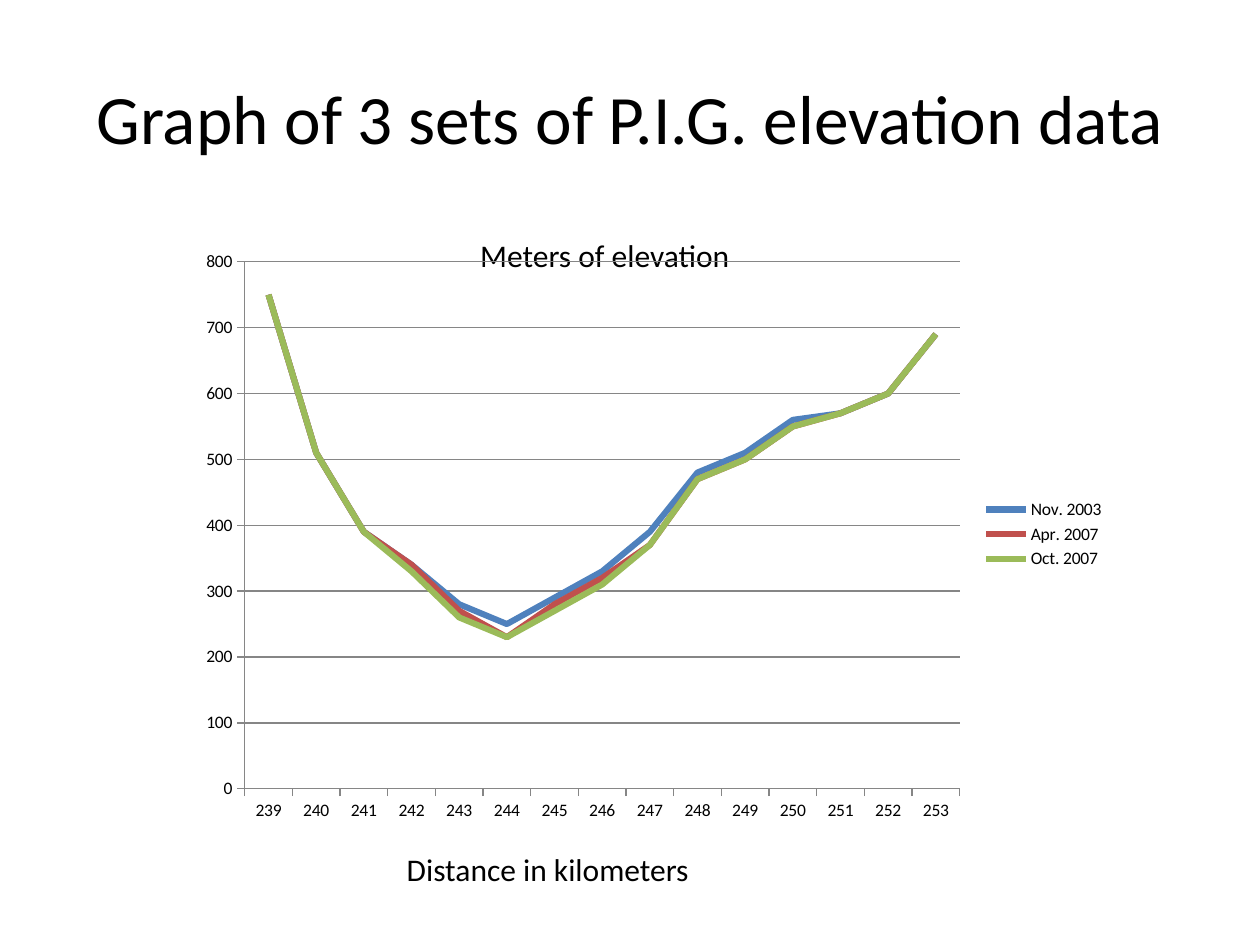
from lxml import etree
from pptx import Presentation
from pptx import util as u
from pptx.chart.data import CategoryChartData
from pptx.dml.color import RGBColor
from pptx.enum import chart as charts, text
from pptx.oxml.ns import qn

BLACK = RGBColor(0x00, 0x00, 0x00)
GRAY = RGBColor(0x86, 0x86, 0x86)
BLUE = RGBColor(0x4F, 0x81, 0xBD)
RED = RGBColor(0xC0, 0x50, 0x4D)
GREEN = RGBColor(0x9B, 0xBB, 0x59)
FONT = "Calibri"

KILOMETERS = [str(kilometer) for kilometer in range(239, 254)]
ELEVATIONS = {
    "Nov. 2003": (BLUE, [750, 510, 390, 340, 280, 250, 290, 330, 390, 480, 510, 560, 570, 600, 690]),
    "Apr. 2007": (RED, [750, 510, 390, 340, 270, 230, 280, 320, 370, 470, 500, 550, 570, 600, 690]),
    "Oct. 2007": (GREEN, [750, 510, 390, 330, 260, 230, 270, 310, 370, 470, 500, 550, 570, 600, 690]),
}
PLOT_LAYOUT = {
    "layoutTarget": "inner", "xMode": "edge", "yMode": "edge",
    "x": 0.06, "y": 0.04, "w": 0.77, "h": 0.89,
}


def set_font(font, size):
    """Give a font the slide's typeface and colour at a size in points."""
    for name, value in {"name": FONT, "size": u.Pt(size), "bold": False}.items():
        setattr(font, name, value)
    font.color.rgb = BLACK


def add_label(slide, box, wording, size, align, frame_format):
    """Place one paragraph of text in the given box."""
    frame = slide.shapes.add_textbox(*map(u.Inches, box)).text_frame
    for name, value in {"word_wrap": True, **frame_format}.items():
        setattr(frame, name, value)
    paragraph = frame.paragraphs[0]
    paragraph.alignment = align
    run = paragraph.add_run()
    run.text = wording
    set_font(run.font, size)


def set_plot_layout(chart):
    """Fix the inner plot area as fractions of the chart."""
    plot_area = chart.plots[0]._element.getparent()
    layout = plot_area.find(qn("c:layout"))
    if layout is None:
        layout = etree.Element(qn("c:layout"))
        plot_area.insert(0, layout)
    manual = etree.SubElement(layout, qn("c:manualLayout"))
    for name, value in PLOT_LAYOUT.items():
        etree.SubElement(manual, qn(f"c:{name}")).set("val", str(value))


def format_axes(chart):
    """Style both axes and the horizontal gridlines."""
    value_axis = chart.value_axis
    value_axis.has_major_gridlines = True
    value_format = {"minimum_scale": 0, "maximum_scale": 800, "major_unit": 100}
    for name, value in value_format.items():
        setattr(value_axis, name, value)
    value_axis.tick_labels.number_format = "0"
    value_axis.tick_labels.number_format_is_linked = False
    for axis in (chart.category_axis, value_axis):
        axis.major_tick_mark = charts.XL_TICK_MARK.OUTSIDE
        set_font(axis.tick_labels.font, 10)
    for part in (chart.category_axis, value_axis, value_axis.major_gridlines):
        part.format.line.color.rgb = GRAY
        part.format.line.width = u.Pt(0.75)


def add_elevation_chart(slide, box):
    """Place the line chart of the three surveys in the given box."""
    data = CategoryChartData(number_format="0")
    data.categories = KILOMETERS
    for name, (_, values) in ELEVATIONS.items():
        data.add_series(name, values)
    chart = slide.shapes.add_chart(
        charts.XL_CHART_TYPE.LINE, *map(u.Inches, box), data
    ).chart
    set_font(chart.font, 10)
    chart.has_title = False
    chart.has_legend = True
    chart.legend.position = charts.XL_LEGEND_POSITION.RIGHT
    chart.legend.include_in_layout = False
    set_font(chart.legend.font, 10)
    plot = chart.plots[0]
    plot.vary_by_categories = False
    for series, (color, _) in zip(plot.series, ELEVATIONS.values()):
        series.smooth = False
        series.marker.style = charts.XL_MARKER_STYLE.NONE
        series.format.line.color.rgb = color
        series.format.line.width = u.Pt(3.5)
    format_axes(chart)
    set_plot_layout(chart)


def main():
    """Build and save the elevation slide."""
    presentation = Presentation()
    presentation.slide_width = u.Inches(10)
    presentation.slide_height = u.Inches(7.5)
    slide = presentation.slides.add_slide(presentation.slide_layouts[6])
    center, left = text.PP_ALIGN.CENTER, text.PP_ALIGN.LEFT
    add_label(slide, (0.5, 0.3, 9, 1.25), "Graph of 3 sets of P.I.G. elevation data",
              39.6, center, {"vertical_anchor": text.MSO_ANCHOR.MIDDLE})
    add_label(slide, (0.74, 1.75, 8.12, 4.95), "Meters of elevation",
              18, center, {"margin_top": u.Inches(0.12)})
    add_elevation_chart(slide, (1.5, 1.89, 7.37, 4.7))
    add_label(slide, (3.13, 6.7, 4.26, 0.4), "Distance in kilometers",
              18, left, {"auto_size": text.MSO_AUTO_SIZE.SHAPE_TO_FIT_TEXT})
    presentation.save("out.pptx")


if __name__ == "__main__":
    main()
